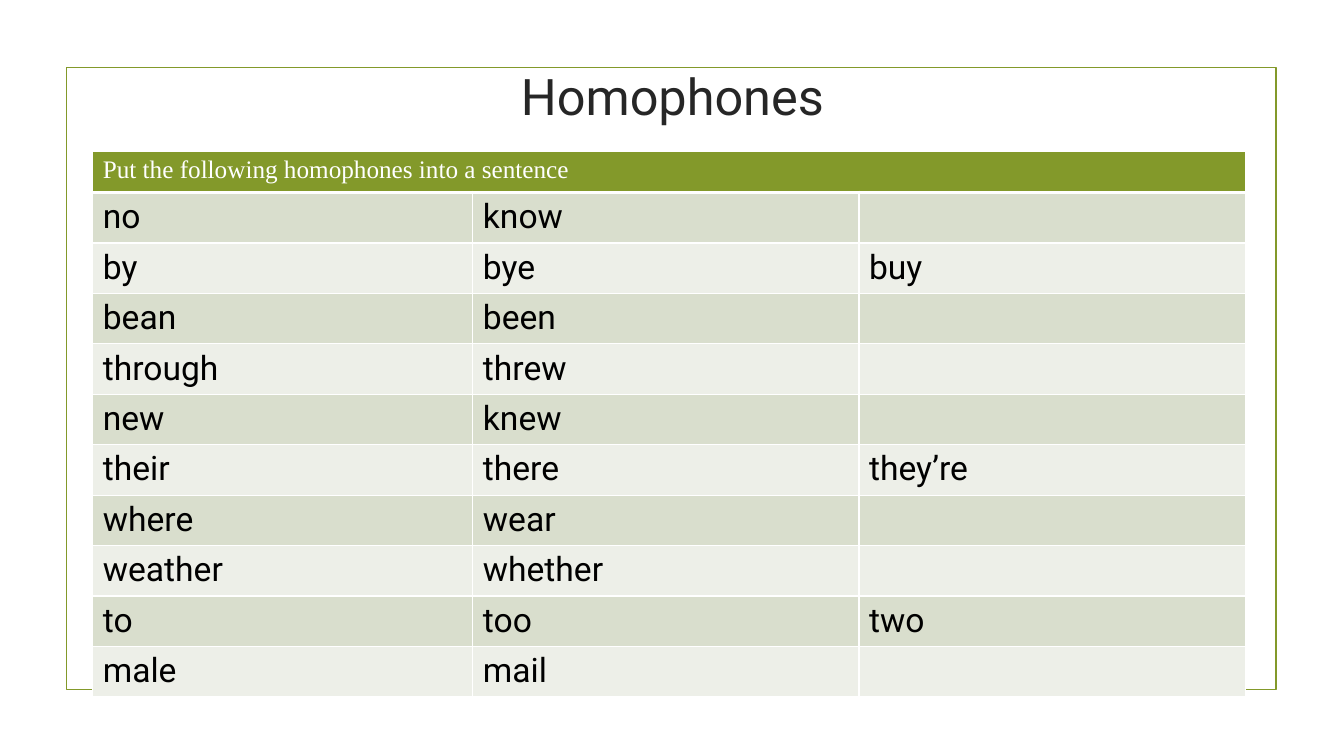
import pptx
import pptx.util
import pptx.dml.color
import pptx.enum.shapes
import pptx.enum.text
import pptx.oxml
import pptx.oxml.ns
from pptx.util import Inches

GREEN, WHITE = "83992A", "FFFFFF"
BANDS = ["D9DECD", "EDEFE8"]
HEAD = {"name": "Times New Roman", "size": 18, "color": WHITE, "bold": False}
WORD = {"name": "Roboto", "size": 24, "color": "000000", "bold": False}
TITLE = {"name": "Roboto", "size": 36, "color": "262626"}
WORDS = [
    ["no", "know", ""],
    ["by", "bye", "buy"],
    ["bean", "been", ""],
    ["through", "threw", ""],
    ["new", "knew", ""],
    ["their", "there", "they’re"],
    ["where", "wear", ""],
    ["weather", "whether", ""],
    ["to", "too", "two"],
    ["male", "mail", ""],
]


def rgb(code):
    return pptx.dml.color.RGBColor.from_string(code)


class Page:
    """Holds the style and the current slide."""

    def __init__(self, deck):
        self.slide = deck.slides.add_slide(deck.slide_layouts[6])
        self.shapes = self.slide.shapes

    def style(self, font, look):
        for key, value in look.items():
            if key == "color":
                font.color.rgb = rgb(value)
            elif key == "size":
                font.size = pptx.util.Pt(value)
            else:
                setattr(font, key, value)

    def frame(self, box, color):
        kind = pptx.enum.shapes.MSO_SHAPE.RECTANGLE
        shape = self.shapes.add_shape(kind, *map(Inches, box))
        shape.shadow.inherit = False
        shape.fill.background()
        shape.line.color.rgb = rgb(color)
        shape.line.width = pptx.util.Pt(1.25)

    def title(self, box, text, look):
        frame = self.shapes.add_textbox(*map(Inches, box)).text_frame
        frame.word_wrap = True
        frame.vertical_anchor = pptx.enum.text.MSO_ANCHOR.MIDDLE
        para = frame.paragraphs[0]
        para.text = text
        para.alignment = pptx.enum.text.PP_ALIGN.CENTER
        self.style(para.font, look)

    def edge(self, cell, base):
        """Draw white cell borders, with the bottom one base points wide."""
        props = cell._tc.get_or_add_tcPr()
        for spot, side in enumerate("LRTB"):
            width = pptx.util.Pt(base if side == "B" else 1)
            props.insert(spot, pptx.oxml.parse_xml(
                f'<a:ln{side} {pptx.oxml.ns.nsdecls("a")} w="{width}">'
                f'<a:solidFill><a:srgbClr val="{WHITE}"/></a:solidFill>'
                f'</a:ln{side}>'))

    def cell(self, cell, text, look, fill, base=1):
        cell.fill.solid()
        cell.fill.fore_color.rgb = rgb(fill)
        self.edge(cell, base)
        if text:
            para = cell.text_frame.paragraphs[0]
            para.text = text
            self.style(para.runs[0].font, look)

    def table(self, left, top, widths, head, rows):
        tall = [0.41] + [0.49] * len(rows)
        box = map(Inches, (left, top, sum(widths), sum(tall)))
        grid = self.shapes.add_table(len(tall), len(widths), *box).table
        for col, width in zip(grid.columns, widths):
            col.width = Inches(width)
        for row, height in zip(grid.rows, tall):
            row.height = Inches(height)
        for c in range(len(widths)):
            self.cell(grid.cell(0, c), "" if c else head, HEAD, GREEN, 3)
        grid.cell(0, 0).merge(grid.cell(0, len(widths) - 1))
        for r, row in enumerate(rows):
            for c, text in enumerate(row):
                self.cell(grid.cell(r + 1, c), text, WORD, BANDS[r % 2])


def main():
    deck = pptx.Presentation()
    deck.slide_width, deck.slide_height = Inches(13.33), Inches(7.5)
    page = Page(deck)
    page.frame((0.66, 0.67, 12, 6.17), GREEN)
    page.title((0.92, 0.4, 11.5, 1.1), "Homophones", TITLE)
    page.table(0.92, 1.5, [3.77, 3.83, 3.83],
               "Put the following homophones into a sentence", WORDS)
    deck.save("out.pptx")


if __name__ == "__main__":
    main()
